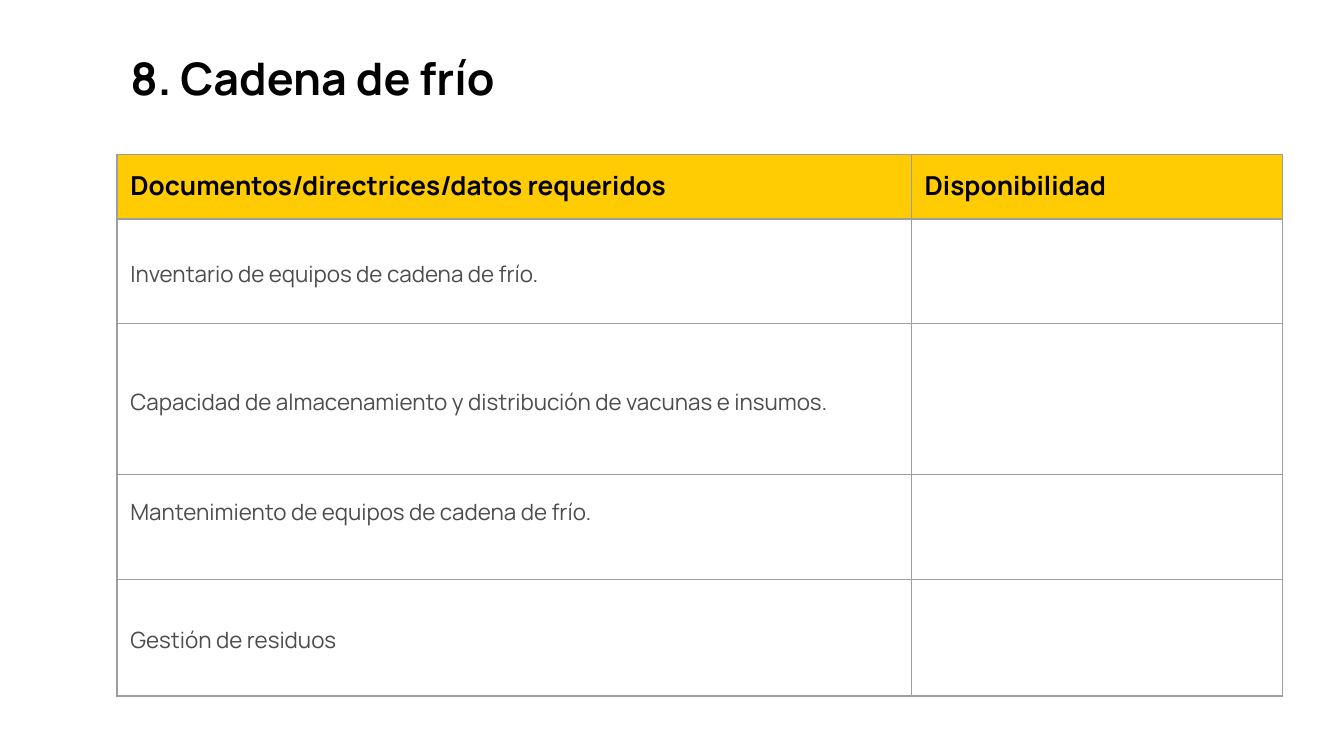
from dataclasses import dataclass

import pptx
import pptx.dml.color
import pptx.enum.text
import pptx.oxml
import pptx.oxml.ns
import pptx.util

Inches = pptx.util.Inches
Anchor = pptx.enum.text.MSO_ANCHOR

FONT = "Manrope"
BLACK, GRAY, YELLOW, BORDER = "000000", "4C4C4C", "FFCB03", "9E9E9E"
PAGE_WIDTH = 10
PAGE_HEIGHT = PAGE_WIDTH * 9 / 16
LEFT = 0.87
INSET = 0.1
COLUMN_WIDTHS = (5.91, 2.76)
MARGINS = {f"margin_{side}": Inches(INSET) for side in ("left", "top", "right", "bottom")}
TITLE_FORMAT = {"name": FONT, "size": pptx.util.Pt(24), "bold": True}
HEADER_FORMAT = {"name": FONT, "size": pptx.util.Pt(14), "bold": True}
BODY_FORMAT = {"name": FONT, "size": pptx.util.Pt(12), "bold": False}


@dataclass
class Requirement:
    text: str
    height: float
    raised: float = 0  # extra bottom margin that lifts the text


HEADERS = ("Documentos/directrices/datos requeridos", "Disponibilidad")
HEADER_HEIGHT = 0.48
REQUIREMENTS = (
    Requirement("Inventario de equipos de cadena de frío.", 0.78),
    Requirement("Capacidad de almacenamiento y distribución de vacunas e insumos.", 1.12),
    Requirement("Mantenimiento de equipos de cadena de frío.", 0.78, raised=0.26),
    Requirement("Gestión de residuos", 0.87),
)


def color(value: str) -> pptx.dml.color.RGBColor:
    return pptx.dml.color.RGBColor.from_string(value)


def apply(target, values: dict) -> None:
    for name, value in values.items():
        setattr(target, name, value)


def write(frame, text: str, font_format: dict, font_color: str) -> None:
    para = frame.paragraphs[0]
    para.alignment = pptx.enum.text.PP_ALIGN.LEFT
    span = para.add_run()
    span.text = text
    apply(span.font, font_format)
    span.font.color.rgb = color(font_color)


def add_borders(cell) -> None:
    properties = cell._tc.get_or_add_tcPr()
    for side in ("lnL", "lnR", "lnT", "lnB"):
        properties.append(pptx.oxml.parse_xml(
            f'<a:{side} {pptx.oxml.ns.nsdecls("a")} w="{pptx.util.Pt(0.75)}">'
            f'<a:solidFill><a:srgbClr val="{BORDER}"/></a:solidFill></a:{side}>'))


def add_title(page, text: str) -> None:
    box = page.shapes.title
    apply(box, {"left": Inches(LEFT), "top": Inches(0.28),
                "width": Inches(PAGE_WIDTH - LEFT), "height": Inches(0.59)})
    frame = box.text_frame
    apply(frame, MARGINS | {"word_wrap": True, "vertical_anchor": Anchor.TOP,
                            "auto_size": pptx.enum.text.MSO_AUTO_SIZE.NONE})
    write(frame, text, TITLE_FORMAT, BLACK)


def add_requirements_table(page) -> None:
    heights = [HEADER_HEIGHT] + [item.height for item in REQUIREMENTS]
    table = page.shapes.add_table(
        len(heights), len(COLUMN_WIDTHS), Inches(LEFT), Inches(1.15),
        Inches(sum(COLUMN_WIDTHS)), Inches(sum(heights))).table
    apply(table, {"first_row": False, "horz_banding": False})
    for column, width in zip(table.columns, COLUMN_WIDTHS):
        column.width = Inches(width)
    for row, height in zip(table.rows, heights):
        row.height = Inches(height)
    for cell in table.iter_cells():
        apply(cell, MARGINS)
        add_borders(cell)
        cell.fill.background()

    for column, text in enumerate(HEADERS):
        cell = table.cell(0, column)
        cell.fill.solid()
        cell.fill.fore_color.rgb = color(YELLOW)
        write(cell.text_frame, text, HEADER_FORMAT, BLACK)
    for row, item in enumerate(REQUIREMENTS, start=1):
        cell = table.cell(row, 0)
        apply(cell, {"vertical_anchor": Anchor.MIDDLE,
                     "margin_bottom": Inches(INSET + item.raised)})
        write(cell.text_frame, item.text, BODY_FORMAT, GRAY)
        cell.text_frame.paragraphs[0].line_spacing = 1.15


def main() -> None:
    deck = pptx.Presentation()
    apply(deck, {"slide_width": Inches(PAGE_WIDTH), "slide_height": Inches(PAGE_HEIGHT)})
    page = deck.slides.add_slide(deck.slide_layouts.get_by_name("Title Only"))
    add_title(page, "8. Cadena de frío")
    add_requirements_table(page)
    deck.save("out.pptx")


if __name__ == "__main__":
    main()
